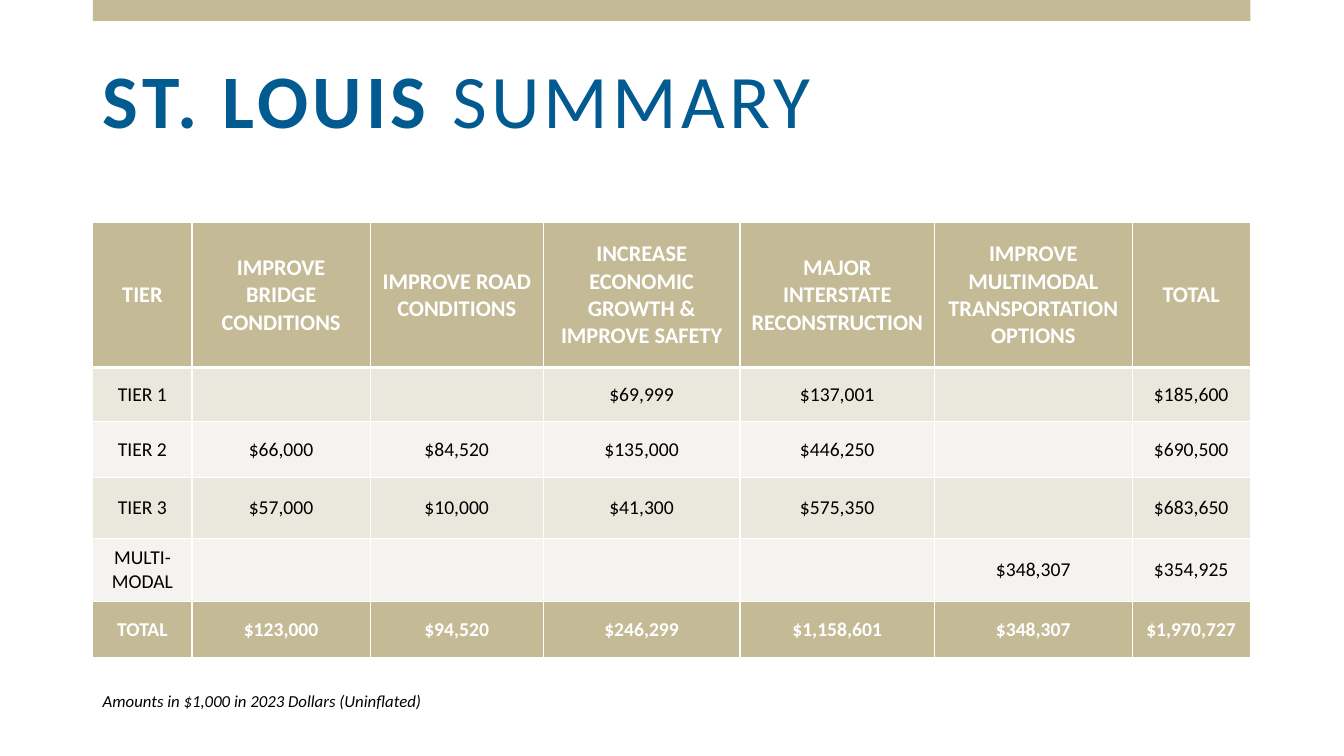
from lxml import etree
from pptx import Presentation
from pptx.dml.color import RGBColor
from pptx.enum.shapes import MSO_SHAPE
from pptx.enum.text import MSO_ANCHOR, MSO_AUTO_SIZE, PP_ALIGN
from pptx.oxml.ns import qn
from pptx.util import Cm, Pt

RECTANGLE = MSO_SHAPE.RECTANGLE
MIDDLE = MSO_ANCHOR.MIDDLE
NO_AUTOFIT = MSO_AUTO_SIZE.NONE
LEFT, CENTER = PP_ALIGN.LEFT, PP_ALIGN.CENTER

TITLE = [("ST. LOUIS ", True), ("SUMMARY", False)]
FOOTNOTE = "Amounts in $1,000 in 2023 Dollars (Uninflated)"
SUMMARY_ROWS = [
    ["TIER", "IMPROVE BRIDGE CONDITIONS", "IMPROVE ROAD CONDITIONS",
     "INCREASE ECONOMIC GROWTH & IMPROVE SAFETY", "MAJOR INTERSTATE RECONSTRUCTION",
     "IMPROVE MULTIMODAL TRANSPORTATION OPTIONS", "TOTAL"],
    ["TIER 1", "", "", "$69,999", "$137,001", "", "$185,600"],
    ["TIER 2", "$66,000", "$84,520", "$135,000", "$446,250", "", "$690,500"],
    ["TIER 3", "$57,000", "$10,000", "$41,300", "$575,350", "", "$683,650"],
    ["MULTI-MODAL", "", "", "", "", "$348,307", "$354,925"],
    ["TOTAL", "$123,000", "$94,520", "$246,299", "$1,158,601", "$348,307", "$1,970,727"],
]
COLUMN_WIDTHS = [2.5, 4.49, 4.36, 4.96, 4.9, 4.98, 2.98]
ROW_HEIGHTS = [3.65, 1.36, 1.42, 1.52, 1.6, 1.42]

THEME = {
    "font": "Calibri",
    "gold": "C4BA96",
    "blue": "015A90",
    "white": "FFFFFF",
    "black": "000000",
    "bands": ["EAE7DD", "F5F3EF"],
    "title_size": 54,
    "header_size": 16,
    "body_size": 14,
    "note_size": 12,
    "letter_spacing": 3,
    "thin_border": 1,
    "header_border": 3,
}
MARGIN = 2.34
CONTENT_WIDTH = sum(COLUMN_WIDTHS)


def add_text(paragraph, text, color, size, **style):
    run = paragraph.add_run()
    run.text = text
    run.font.color.rgb = RGBColor.from_string(color)
    for name, value in {"name": THEME["font"], "size": Pt(size), **style}.items():
        setattr(run.font, name, value)
    return run


def set_fill(fill, color):
    fill.solid()
    fill.fore_color.rgb = RGBColor.from_string(color)


def set_borders(cell, top, bottom):
    thin = THEME["thin_border"]
    properties = cell._tc.get_or_add_tcPr()
    widths = {"a:lnL": thin, "a:lnR": thin, "a:lnT": top, "a:lnB": bottom}
    for position, (tag, width) in enumerate(widths.items()):
        line = etree.Element(qn(tag), w=str(Pt(width)))
        solid = etree.SubElement(line, qn("a:solidFill"))
        etree.SubElement(solid, qn("a:srgbClr"), val=THEME["white"])
        properties.insert(position, line)


def add_top_bar(slide):
    bar = slide.shapes.add_shape(RECTANGLE, Cm(MARGIN), 0, Cm(CONTENT_WIDTH), Cm(0.53))
    bar.shadow.inherit = False
    set_fill(bar.fill, THEME["gold"])
    bar.line.fill.background()


def add_title(slide):
    title = slide.shapes.title
    bounds = {"left": MARGIN, "top": 0.81, "width": CONTENT_WIDTH, "height": 3.63}
    for name, value in bounds.items():
        setattr(title, name, Cm(value))
    frame = title.text_frame
    frame.auto_size = NO_AUTOFIT
    frame.vertical_anchor = MIDDLE
    paragraph = frame.paragraphs[0]
    paragraph.alignment = LEFT
    paragraph.line_spacing = 0.9
    for text, bold in TITLE:
        run = add_text(paragraph, text, THEME["blue"], THEME["title_size"], bold=bold)
        run.font._element.set("spc", str(THEME["letter_spacing"] * 100))


def fill_cell(cell, text, row, column):
    last_row = len(SUMMARY_ROWS) - 1
    is_header = row == 0
    is_strong = row in (0, last_row)
    if row and column:
        for side in ("left", "right", "top", "bottom"):
            setattr(cell, f"margin_{side}", 0)
    cell.vertical_anchor = MIDDLE
    set_fill(cell.fill, THEME["gold"] if is_strong else THEME["bands"][(row - 1) % 2])
    thin, thick = THEME["thin_border"], THEME["header_border"]
    set_borders(cell, thick if row == 1 else thin, thick if is_header else thin)
    if text:
        paragraph = cell.text_frame.paragraphs[0]
        paragraph.alignment = CENTER
        add_text(paragraph, text, THEME["white" if is_strong else "black"],
                 THEME["header_size" if is_header else "body_size"], bold=is_strong)


def add_summary_table(slide):
    table = slide.shapes.add_table(
        len(ROW_HEIGHTS), len(COLUMN_WIDTHS), Cm(MARGIN), Cm(5.61),
        Cm(CONTENT_WIDTH), Cm(sum(ROW_HEIGHTS))).table
    for column, width in zip(table.columns, COLUMN_WIDTHS):
        column.width = Cm(width)
    for row, height in zip(table.rows, ROW_HEIGHTS):
        row.height = Cm(height)
    for row, values in enumerate(SUMMARY_ROWS):
        for column, text in enumerate(values):
            fill_cell(table.cell(row, column), text, row, column)


def add_footnote(slide):
    note = slide.shapes.add_textbox(Cm(MARGIN), Cm(17.27), Cm(13.61), Cm(0.77))
    note.text_frame.word_wrap = True
    add_text(note.text_frame.paragraphs[0], FOOTNOTE, THEME["black"],
             THEME["note_size"], italic=True)


def main():
    presentation = Presentation()
    presentation.slide_width = Cm(33.87)
    presentation.slide_height = Cm(19.05)
    slide = presentation.slides.add_slide(presentation.slide_layouts[5])
    add_top_bar(slide)
    add_title(slide)
    add_summary_table(slide)
    add_footnote(slide)
    presentation.save("out.pptx")


if __name__ == "__main__":
    main()
